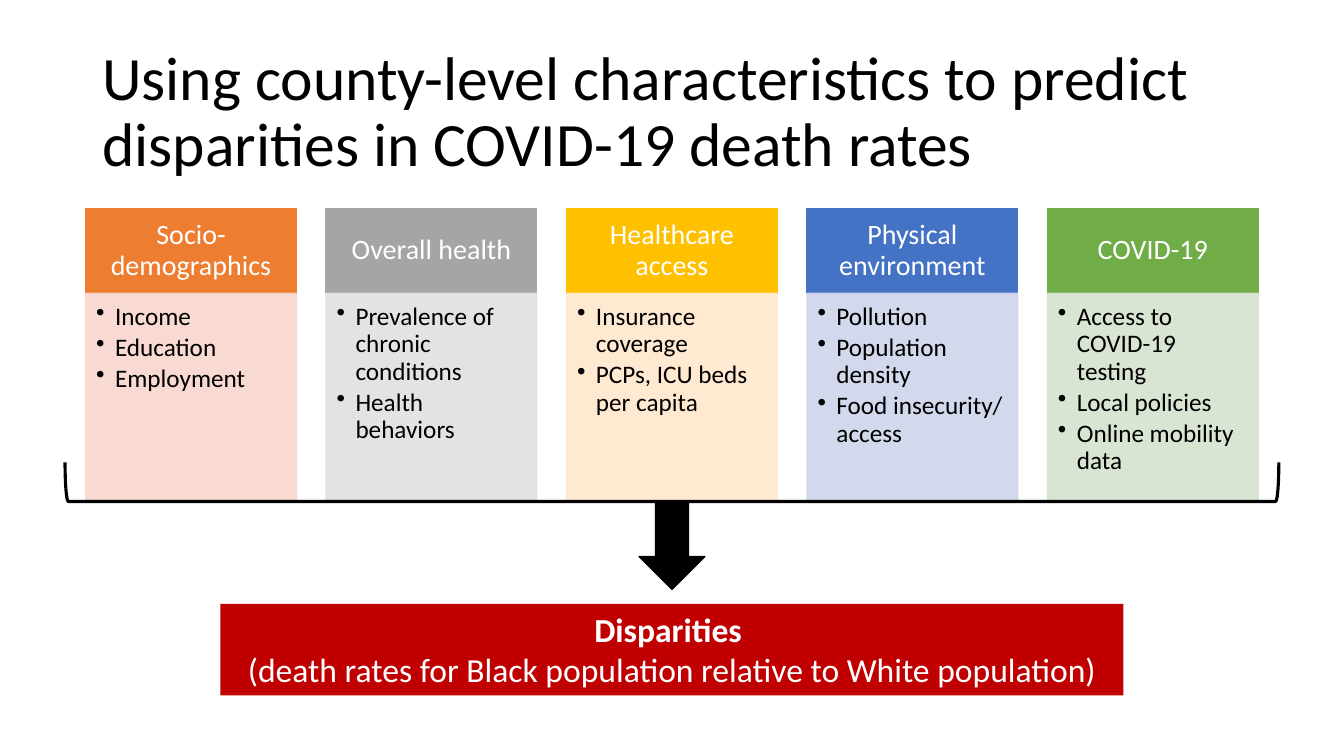
from dataclasses import dataclass

import pptx
import pptx.dml.color
import pptx.enum.shapes
import pptx.enum.text
import pptx.oxml.ns
import pptx.shapes.autoshape
import pptx.slide
import pptx.text.text
import pptx.util
from lxml import etree

Pt = pptx.util.Pt
RGBColor = pptx.dml.color.RGBColor
MSO_SHAPE = pptx.enum.shapes.MSO_SHAPE
MSO_ANCHOR = pptx.enum.text.MSO_ANCHOR
PP_ALIGN = pptx.enum.text.PP_ALIGN
qn = pptx.oxml.ns.qn

FONT = "Calibri"
BLACK = RGBColor(0x00, 0x00, 0x00)
WHITE = RGBColor(0xFF, 0xFF, 0xFF)
RED = RGBColor(0xC0, 0x00, 0x00)
ORANGE = RGBColor(0xED, 0x7D, 0x31)
PALE_ORANGE = RGBColor(0xF8, 0xD7, 0xCE)
GRAY = RGBColor(0xA5, 0xA5, 0xA5)
PALE_GRAY = RGBColor(0xE1, 0xE1, 0xE1)
GOLD = RGBColor(0xFF, 0xC0, 0x00)
PALE_GOLD = RGBColor(0xFF, 0xE8, 0xCC)
BLUE = RGBColor(0x44, 0x72, 0xC4)
PALE_BLUE = RGBColor(0xCF, 0xD5, 0xEA)
GREEN = RGBColor(0x70, 0xAD, 0x47)
PALE_GREEN = RGBColor(0xD5, 0xE3, 0xCF)

# Column grid, in points
COL_LEFT, COL_PITCH, COL_W = 61.2, 171.75, 150.5
HEAD_TOP, HEAD_H, BODY_H = 149, 60.5, 149
BULLET_INDENT = 13.5


@dataclass
class Box:
    left: float
    top: float
    width: float
    height: float

    def lengths(self) -> tuple:
        return Pt(self.left), Pt(self.top), Pt(self.width), Pt(self.height)


@dataclass
class Category:
    title: str
    color: RGBColor
    tint: RGBColor
    items: list[str]


CATEGORIES = [
    Category("Socio-demographics", ORANGE, PALE_ORANGE,
             ["Income", "Education", "Employment"]),
    Category("Overall health", GRAY, PALE_GRAY,
             ["Prevalence of chronic conditions", "Health behaviors"]),
    Category("Healthcare access", GOLD, PALE_GOLD,
             ["Insurance coverage", "PCPs, ICU beds per capita"]),
    Category("Physical environment", BLUE, PALE_BLUE,
             ["Pollution", "Population density", "Food insecurity/ access"]),
    Category("COVID-19", GREEN, PALE_GREEN,
             ["Access to COVID-19 testing", "Local policies", "Online mobility data"]),
]


def add_filled(s: pptx.slide.Slide, kind: MSO_SHAPE, box: Box, color: RGBColor,
               outlined: bool = True) -> pptx.shapes.autoshape.Shape:
    sp = s.shapes.add_shape(kind, *box.lengths())
    sp.shadow.inherit = False
    sp.fill.solid()
    sp.fill.fore_color.rgb = color
    if outlined:
        sp.line.color.rgb = color
        sp.line.width = Pt(1)
    else:
        sp.line.fill.background()
    return sp


def set_opacity(sp: pptx.shapes.autoshape.Shape, percent: int) -> None:
    for clr in sp._element.spPr.iter(qn("a:srgbClr")):
        etree.SubElement(clr, qn("a:alpha"), val=str(percent * 1000))


def write(tf: pptx.text.text.TextFrame, lines: list[str], size: float, color: RGBColor,
          align: PP_ALIGN = PP_ALIGN.LEFT, anchor: MSO_ANCHOR = MSO_ANCHOR.MIDDLE,
          spacing: float = 0.9) -> None:
    tf.word_wrap = True
    tf.vertical_anchor = anchor
    for i, line in enumerate(lines):
        p = tf.paragraphs[0] if i == 0 else tf.add_paragraph()
        p.text = line
        p.alignment = align
        p.line_spacing = spacing
        p.font.name = FONT
        p.font.size = Pt(size)
        p.font.color.rgb = color


def set_margins(tf: pptx.text.text.TextFrame, left: float, top: float,
                right: float, bottom: float) -> None:
    tf.margin_left, tf.margin_top = Pt(left), Pt(top)
    tf.margin_right, tf.margin_bottom = Pt(right), Pt(bottom)


def add_bullet(p: pptx.text.text._Paragraph) -> None:
    p.space_after = Pt(2.7)
    pPr = p._p.get_or_add_pPr()
    pPr.set("marL", str(Pt(BULLET_INDENT)))
    pPr.set("indent", str(-Pt(BULLET_INDENT)))
    bullet = etree.Element(qn("a:buChar"), char="•")
    pPr.find(qn("a:spcAft")).addnext(bullet)


def add_category(s: pptx.slide.Slide, cat: Category, left: float) -> None:
    head = add_filled(s, MSO_SHAPE.RECTANGLE, Box(left, HEAD_TOP, COL_W, HEAD_H), cat.color)
    set_margins(head.text_frame, 11.5, 6.5, 11.5, 6.5)
    write(head.text_frame, [cat.title], 20, WHITE, PP_ALIGN.CENTER)

    body = add_filled(s, MSO_SHAPE.RECTANGLE,
                      Box(left, HEAD_TOP + HEAD_H, COL_W, BODY_H), cat.tint)
    set_opacity(body, 90)
    set_margins(body.text_frame, 7.5, 7.5, 10, 11.5)
    write(body.text_frame, cat.items, 18, BLACK, anchor=MSO_ANCHOR.TOP)
    for p in body.text_frame.paragraphs:
        add_bullet(p)


def main() -> None:
    prs = pptx.Presentation()
    prs.slide_width, prs.slide_height = Pt(960), Pt(540)
    s = prs.slides.add_slide(prs.slide_layouts[6])

    # Title
    title = s.shapes.add_textbox(*Box(66, 28.75, 828, 104.4).lengths())
    write(title.text_frame,
          ["Using county-level characteristics to predict disparities in COVID-19 death rates"],
          44, BLACK)

    # Category columns
    for i, cat in enumerate(CATEGORIES):
        add_category(s, cat, COL_LEFT + i * COL_PITCH)

    # Arrow to the outcome
    add_filled(s, MSO_SHAPE.DOWN_ARROW, Box(456.5, 359, 47, 62), BLACK)

    # Outcome
    outcome = add_filled(s, MSO_SHAPE.RECTANGLE, Box(157.5, 431.25, 645, 65.4), RED, False)
    write(outcome.text_frame,
          ["Disparities ", "(death rates for Black population relative to White population)"],
          24, WHITE, PP_ALIGN.CENTER, MSO_ANCHOR.TOP, 1.0)
    outcome.text_frame.paragraphs[0].font.bold = True

    # Bracket under the columns
    bracket = s.shapes.add_shape(MSO_SHAPE.LEFT_BRACKET, *Box(466, -89.25, 28, 867).lengths())
    bracket.rotation = 270
    bracket.shadow.inherit = False
    bracket.fill.background()
    bracket.line.color.rgb = BLACK
    bracket.line.width = Pt(2.25)

    prs.save("out.pptx")


if __name__ == "__main__":
    main()
